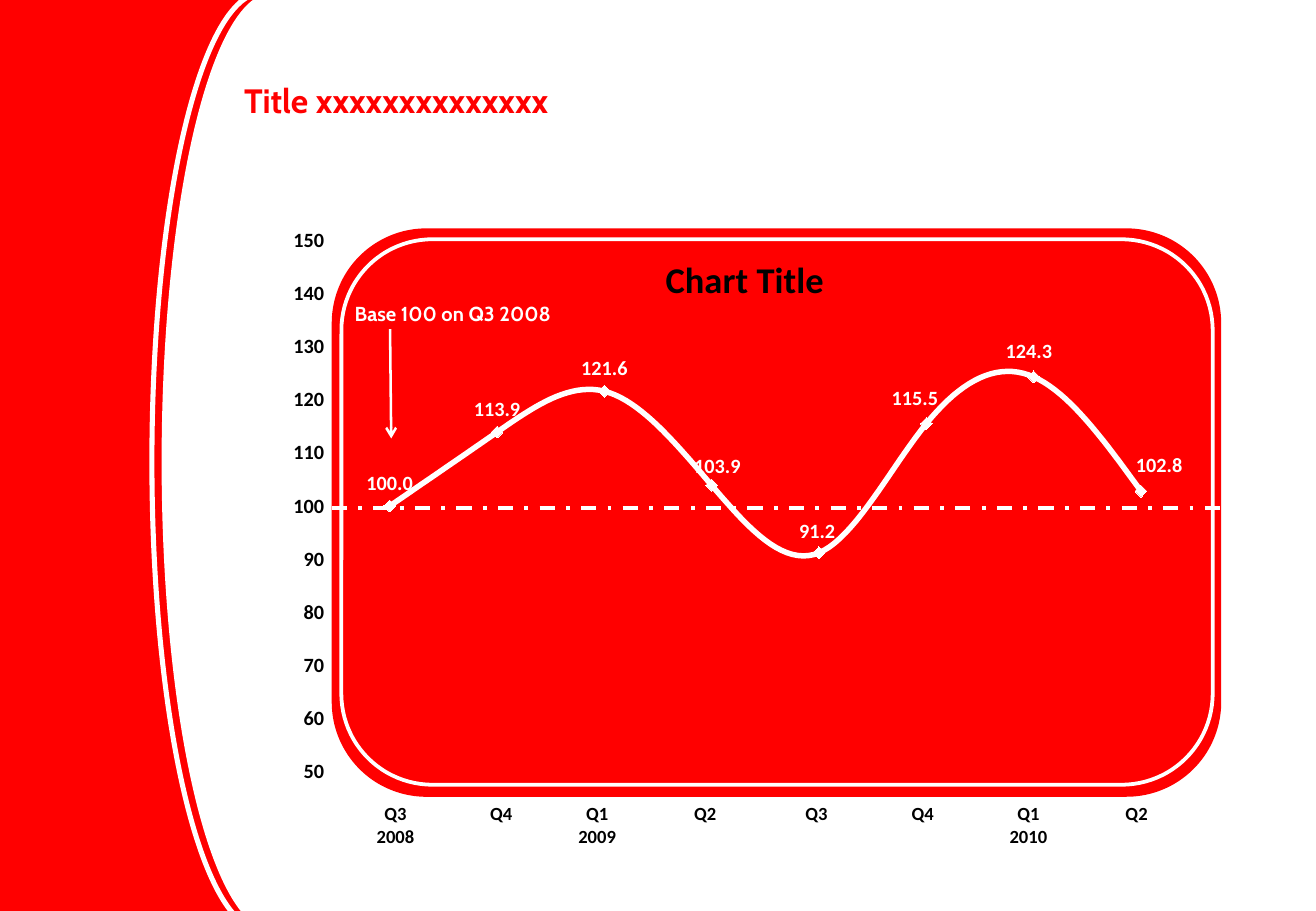
"""Build a slide with a red side band and a smoothed quarterly index chart."""
from lxml import etree
from pptx import Presentation
from pptx.chart.data import CategoryChartData
from pptx.dml.color import RGBColor
from pptx.enum.chart import XL_CHART_TYPE, XL_LABEL_POSITION as POS, XL_MARKER_STYLE, XL_TICK_MARK
from pptx.enum.dml import MSO_LINE
from pptx.enum.shapes import MSO_CONNECTOR, MSO_SHAPE as SHP
from pptx.enum.text import MSO_AUTO_SIZE, PP_ALIGN
from pptx.oxml import parse_xml
from pptx.oxml.ns import nsdecls, qn
from pptx.util import Inches, Pt

RED = RGBColor(0xFF, 0x00, 0x00)
WHITE = RGBColor(0xFF, 0xFF, 0xFF)
BLACK = RGBColor(0x00, 0x00, 0x00)


def set_font(font, color, **values):
    font.color.rgb = color
    for name, value in values.items():
        setattr(font, name, value)


def add_layout(parent, index, **values):
    layout = etree.Element(qn("c:layout"))
    manual = etree.SubElement(layout, qn("c:manualLayout"))
    for name, value in values.items():
        etree.SubElement(manual, qn(f"c:{name}")).set("val", str(value))
    parent.insert(index, layout)


prs = Presentation()
prs.slide_width, prs.slide_height = Inches(10.83), Inches(7.5)
s = prs.slides.add_slide(prs.slide_layouts[6])

panels = [
    (SHP.RECTANGLE, (0, -0.03, 2.31, 7.64), RED, None),
    (SHP.OVAL, (1.33, -0.06, 1.82, 7.72), WHITE, None),
    (SHP.OVAL, (1.25, -0.06, 1.82, 7.72), None, 3),
    (SHP.ROUNDED_RECTANGLE, (2.73, 1.88, 7.32, 4.68), RED, None),
    (SHP.ROUNDED_RECTANGLE, (2.81, 1.97, 7.17, 4.49), None, 2.25),
]
for kind, box, fill, width in panels:
    sp = s.shapes.add_shape(kind, *map(Inches, box))
    sp.shadow.inherit = False
    if fill is None:
        sp.fill.background()
        sp.line.color.rgb = WHITE
        sp.line.width = Pt(width)
    else:
        sp.fill.solid()
        sp.fill.fore_color.rgb = fill
        sp.line.fill.background()

lines = [
    ((2.73, 4.18, 10.12, 4.18), 2.25, MSO_LINE.DASH_DOT, False),
    ((3.21, 2.71, 3.22, 3.61), 1.5, None, True),
]
for ends, width, dash, arrow in lines:
    cx = s.shapes.add_connector(MSO_CONNECTOR.STRAIGHT, *map(Inches, ends))
    cx.line.color.rgb = WHITE
    cx.line.width = Pt(width)
    if dash is not None:
        cx.line.dash_style = dash
    if arrow:
        etree.SubElement(cx.line._get_or_add_ln(), qn("a:tailEnd")).set("type", "arrow")
    etree.SubElement(cx._element.spPr, qn("a:effectLst"))

data = CategoryChartData(number_format="0.0")
data.categories = [str(n) for n in range(1, 9)]
data.add_series("Series 1", (100, 113.9, 121.6, 103.9, 91.2, 115.5, 124.3, 102.8))
chart = s.shapes.add_chart(XL_CHART_TYPE.LINE_MARKERS, *map(Inches, (2.2, 1.88, 7.86, 4.71)), data).chart
set_font(chart.font, BLACK, name="Calibri", size=Pt(18))
chart.has_legend = False
chart.has_title = True
p = chart.chart_title.text_frame.paragraphs[0]
r = p.add_run()
r.text = "Chart Title"
set_font(r.font, BLACK, name="Calibri", size=Pt(21.6), bold=True)

chart.category_axis.visible = False
axis = chart.value_axis
axis_format = {
    "minimum_scale": 50,
    "maximum_scale": 150,
    "major_unit": 10,
    "has_major_gridlines": False,
    "major_tick_mark": XL_TICK_MARK.CROSS,
}
for name, value in axis_format.items():
    setattr(axis, name, value)
axis.format.line.fill.background()
axis.tick_labels.number_format = "0"
axis.tick_labels.number_format_is_linked = False
set_font(axis.tick_labels.font, BLACK, name="Calibri", size=Pt(12), bold=True)

plot = chart.plots[0]
plot.vary_by_categories = False
series = plot.series[0]
series.smooth = True
series.format.line.color.rgb = WHITE
series.format.line.width = Pt(3.25)
marker = series.marker
marker.style, marker.size = XL_MARKER_STYLE.DIAMOND, 7
marker.format.fill.solid()
marker.format.fill.fore_color.rgb = WHITE
marker.format.line.color.rgb = WHITE

labels = series.data_labels
labels.show_value = True
labels.number_format = "0.0"
labels.number_format_is_linked = False
labels.position = POS.ABOVE
label_font = {"name": "Calibri", "size": Pt(12), "bold": True}
set_font(labels.font, WHITE, **label_font)
nudges = {3: (0.006, 0.007), 4: (-0.002, 0.002), 5: (-0.012, -0.005), 6: (-0.005, -0.005), 7: (0.019, -0.005)}
for i, (dx, dy) in nudges.items():
    label = series.points[i].data_label
    set_font(label.font, WHITE, **label_font)
    label.position = POS.ABOVE
    add_layout(labels._element.xpath(f'c:dLbl[c:idx/@val="{i}"]')[0], 1, x=dx, y=dy)

space = chart._chartSpace
area = space.chart.plotArea
for old in area.findall(qn("c:layout")):
    area.remove(old)
add_layout(area, 0, layoutTarget="inner", xMode="edge", yMode="edge", x=0.072, y=0.019, w=0.899, h=0.931)
clear = f'<c:spPr {nsdecls("c", "a")}><a:noFill/><a:ln><a:noFill/></a:ln></c:spPr>'
area.append(parse_xml(clear))
space.chart.addnext(parse_xml(clear))

texts = [
    ("Title xxxxxxxxxxxxxx", (1.91, 0.61, 3.29, 0.44), 20, RED),
    ("Base 100 on Q3 2008", (2.82, 2.43, 2, 0.3), 12, WHITE),
]
for text, box, size, color in texts:
    tf = s.shapes.add_textbox(*map(Inches, box)).text_frame
    tf.word_wrap = False
    tf.auto_size = MSO_AUTO_SIZE.SHAPE_TO_FIT_TEXT
    r = tf.paragraphs[0].add_run()
    r.text = text
    set_font(r.font, color, name="Cabin", size=Pt(size), bold=True)

quarters = ["Q3\n2008", "Q4", "Q1\n2009", "Q2", "Q3", "Q4", "Q1\n2010", "Q2"]
widths = [0.95, 0.79, 0.79, 0.99, 0.84, 0.91, 0.83, 0.95]
table = s.shapes.add_table(1, len(quarters), *map(Inches, (2.78, 6.6, sum(widths), 0.38))).table
table.first_row = table.horz_banding = False
cell_format = {
    "margin_left": Inches(0.01),
    "margin_right": Inches(0.01),
    "margin_top": Inches(0.01),
    "margin_bottom": 0,
}
for i, (quarter, width) in enumerate(zip(quarters, widths)):
    table.columns[i].width = Inches(width)
    cell = table.cell(0, i)
    cell.fill.background()
    for name, value in cell_format.items():
        setattr(cell, name, value)
    cell.text_frame.text = quarter
    for p in cell.text_frame.paragraphs:
        p.alignment = PP_ALIGN.CENTER
        set_font(p.runs[0].font, BLACK, name="Calibri", size=Pt(11), bold=True)

prs.save("out.pptx")
